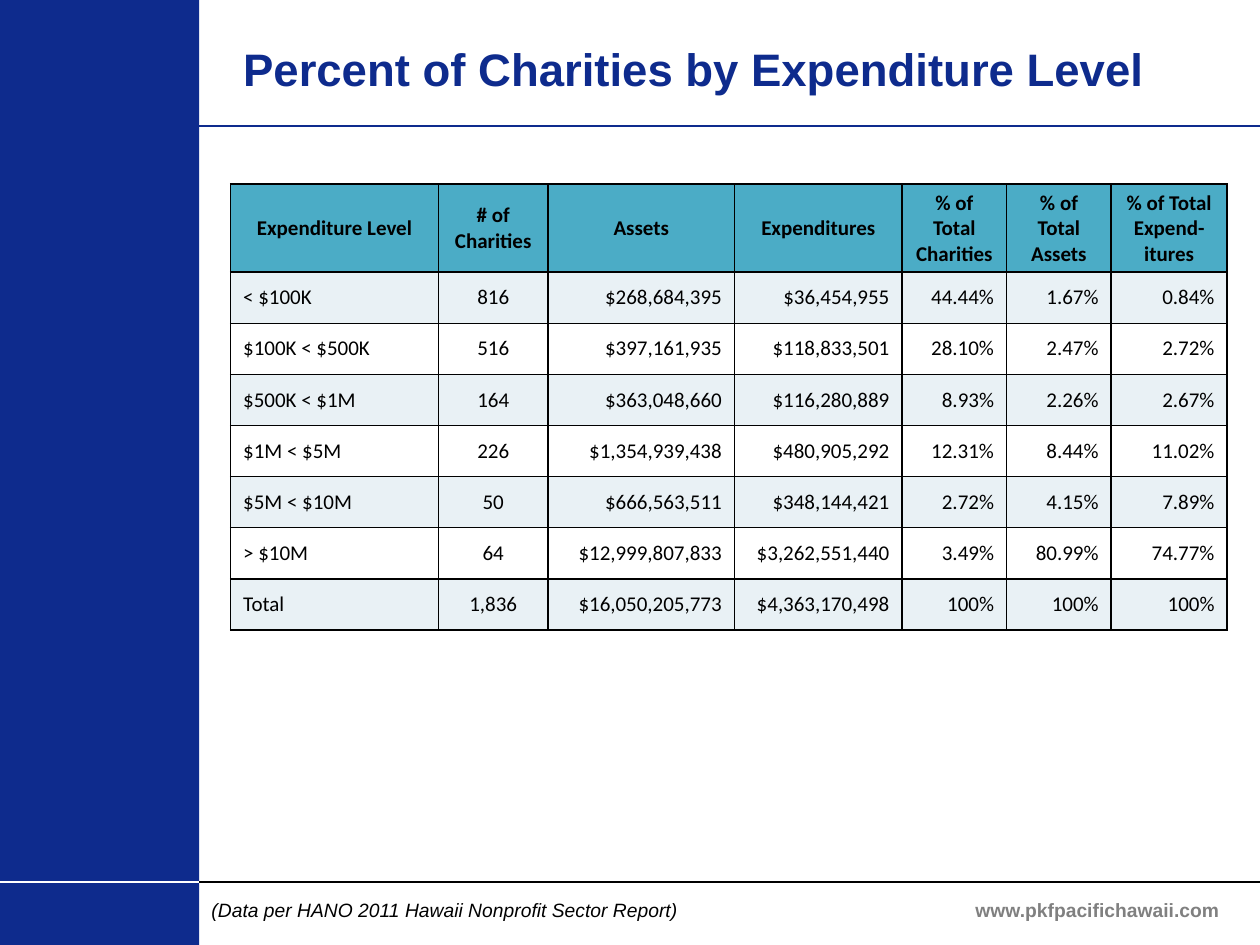
import dataclasses

import lxml.etree
import pptx
import pptx.dml.color
import pptx.enum.shapes
import pptx.enum.text
import pptx.oxml.ns
import pptx.util

Inches = pptx.util.Inches
Pt = pptx.util.Pt
ALIGN = pptx.enum.text.PP_ALIGN
MIDDLE = pptx.enum.text.MSO_ANCHOR.MIDDLE
TOP = pptx.enum.text.MSO_ANCHOR.TOP


@dataclasses.dataclass(frozen=True)
class Theme:
    """Colours, fonts and type sizes of the slide."""
    navy: str = "0E2B8D"
    teal: str = "4BACC6"
    pale: str = "E9F1F5"
    white: str = "FFFFFF"
    black: str = "000000"
    grey: str = "808080"
    sans: str = "Arial"
    table_font: str = "Calibri"
    title_size: int = 26
    table_size: int = 12
    footer_size: int = 11


THEME = Theme()
LEVELS = [
    ("Expenditure Level", "# of Charities", "Assets", "Expenditures",
     "% of Total Charities", "% of Total Assets", "% of Total Expend-itures"),
    ("< $100K", "816", "$268,684,395", "$36,454,955", "44.44%", "1.67%", "0.84%"),
    ("$100K < $500K", "516", "$397,161,935", "$118,833,501", "28.10%", "2.47%", "2.72%"),
    ("$500K < $1M", "164", "$363,048,660", "$116,280,889", "8.93%", "2.26%", "2.67%"),
    ("$1M < $5M", "226", "$1,354,939,438", "$480,905,292", "12.31%", "8.44%", "11.02%"),
    ("$5M < $10M", "50", "$666,563,511", "$348,144,421", "2.72%", "4.15%", "7.89%"),
    ("> $10M", "64", "$12,999,807,833", "$3,262,551,440", "3.49%", "80.99%", "74.77%"),
    ("Total", "1,836", "$16,050,205,773", "$4,363,170,498", "100%", "100%", "100%"),
]
COLUMN_WIDTHS = (1.65, 0.87, 1.48, 1.33, 0.83, 0.83, 0.92)
COLUMN_ALIGNS = (ALIGN.LEFT, ALIGN.CENTER) + (ALIGN.RIGHT,) * 5
TABLE_HEIGHT = 3.54
HEADER_HEIGHT = 0.7


def rgb(colour):
    """Turn a hex string into a colour value."""
    return pptx.dml.color.RGBColor.from_string(colour)


def write(frame, text, colour, align=ALIGN.LEFT, **formats):
    """Put one formatted paragraph in a text frame."""
    paragraph = frame.paragraphs[0]
    paragraph.alignment = align
    run = paragraph.add_run()
    run.text = text
    for name, value in formats.items():
        setattr(run.font, name, value)
    run.font.color.rgb = rgb(colour)


def add_sidebar(slide):
    """Draw the solid band down the left edge."""
    sidebar = slide.shapes.add_shape(pptx.enum.shapes.MSO_SHAPE.RECTANGLE,
                                     0, 0, Inches(1.58), Inches(7.5))
    sidebar.shadow.inherit = False
    sidebar.fill.solid()
    sidebar.fill.fore_color.rgb = rgb(THEME.navy)
    sidebar.line.fill.background()


def add_rule(slide, start, end, y, colour):
    """Draw a thin horizontal rule."""
    rule = slide.shapes.add_connector(pptx.enum.shapes.MSO_CONNECTOR.STRAIGHT,
                                      Inches(start), Inches(y), Inches(end), Inches(y))
    rule.line.width = Pt(1)
    rule.line.color.rgb = rgb(colour)
    lxml.etree.SubElement(rule._element.spPr, pptx.oxml.ns.qn("a:effectLst"))


def set_title(slide, text):
    """Place and format the slide title."""
    title = slide.shapes.title
    place = {"left": 1.83, "top": -0.08, "width": 7.92, "height": 1.25}
    for name, value in place.items():
        setattr(title, name, Inches(value))
    title.text_frame.auto_size = pptx.enum.text.MSO_AUTO_SIZE.NONE
    title.text_frame.vertical_anchor = MIDDLE
    write(title.text_frame, text, THEME.navy, name=THEME.sans,
          size=Pt(THEME.title_size), bold=True)


def add_footer(slide, text, box, colour, anchor, align, **formats):
    """Add a line of text at the foot of the slide."""
    footer = slide.shapes.add_textbox(*map(Inches, box)).text_frame
    footer.word_wrap = True
    footer.vertical_anchor = anchor
    write(footer, text, colour, align, name=THEME.sans,
          size=Pt(THEME.footer_size), **formats)


def add_borders(cell):
    """Outline a cell on all four sides."""
    properties = cell._tc.get_or_add_tcPr()
    for index, side in enumerate(("lnL", "lnR", "lnT", "lnB")):
        border = lxml.etree.Element(pptx.oxml.ns.qn(f"a:{side}"), w=str(Pt(1)))
        fill = lxml.etree.SubElement(border, pptx.oxml.ns.qn("a:solidFill"))
        lxml.etree.SubElement(fill, pptx.oxml.ns.qn("a:srgbClr"), val=THEME.black)
        properties.insert(index, border)


def fill_cell(cell, text, colour, align, bold):
    """Write, shade and outline one table cell."""
    cell.vertical_anchor = MIDDLE
    cell.fill.solid()
    cell.fill.fore_color.rgb = rgb(colour)
    write(cell.text_frame, text, THEME.black, align, name=THEME.table_font,
          size=Pt(THEME.table_size), bold=bold)
    add_borders(cell)


def add_levels_table(slide):
    """Add the table of charities by expenditure level."""
    table = slide.shapes.add_table(len(LEVELS), len(COLUMN_WIDTHS), Inches(1.83), Inches(1.46),
                                   Inches(sum(COLUMN_WIDTHS)), Inches(TABLE_HEIGHT)).table
    for column, width in zip(table.columns, COLUMN_WIDTHS):
        column.width = Inches(width)
    body_height = (TABLE_HEIGHT - HEADER_HEIGHT) / (len(LEVELS) - 1)
    for r, level in enumerate(LEVELS):
        is_header = r == 0
        table.rows[r].height = Inches(HEADER_HEIGHT if is_header else body_height)
        band = THEME.teal if is_header else (THEME.white, THEME.pale)[r % 2]
        for c, text in enumerate(level):
            align = ALIGN.CENTER if is_header else COLUMN_ALIGNS[c]
            fill_cell(table.cell(r, c), text, band, align, is_header)


def main():
    """Build the slide and save it."""
    deck = pptx.Presentation()
    deck.slide_width, deck.slide_height = Inches(10), Inches(7.5)
    slide = deck.slides.add_slide(deck.slide_layouts[5])
    add_sidebar(slide)
    add_rule(slide, 0, 10, 7, THEME.black)
    add_rule(slide, 1.58, 0, 7, THEME.white)
    add_rule(slide, 1.58, 10, 1, THEME.navy)
    set_title(slide, "Percent of Charities by Expenditure Level")
    add_footer(slide, "www.pkfpacifichawaii.com", (7.42, 7.02, 2.58, 0.4),
               THEME.grey, MIDDLE, ALIGN.CENTER, bold=True)
    add_footer(slide, "(Data per HANO 2011 Hawaii Nonprofit Sector Report)",
               (1.58, 7.08, 5.58, 0.29), THEME.black, TOP, ALIGN.LEFT, italic=True)
    add_levels_table(slide)
    deck.save("out.pptx")


if __name__ == "__main__":
    main()
